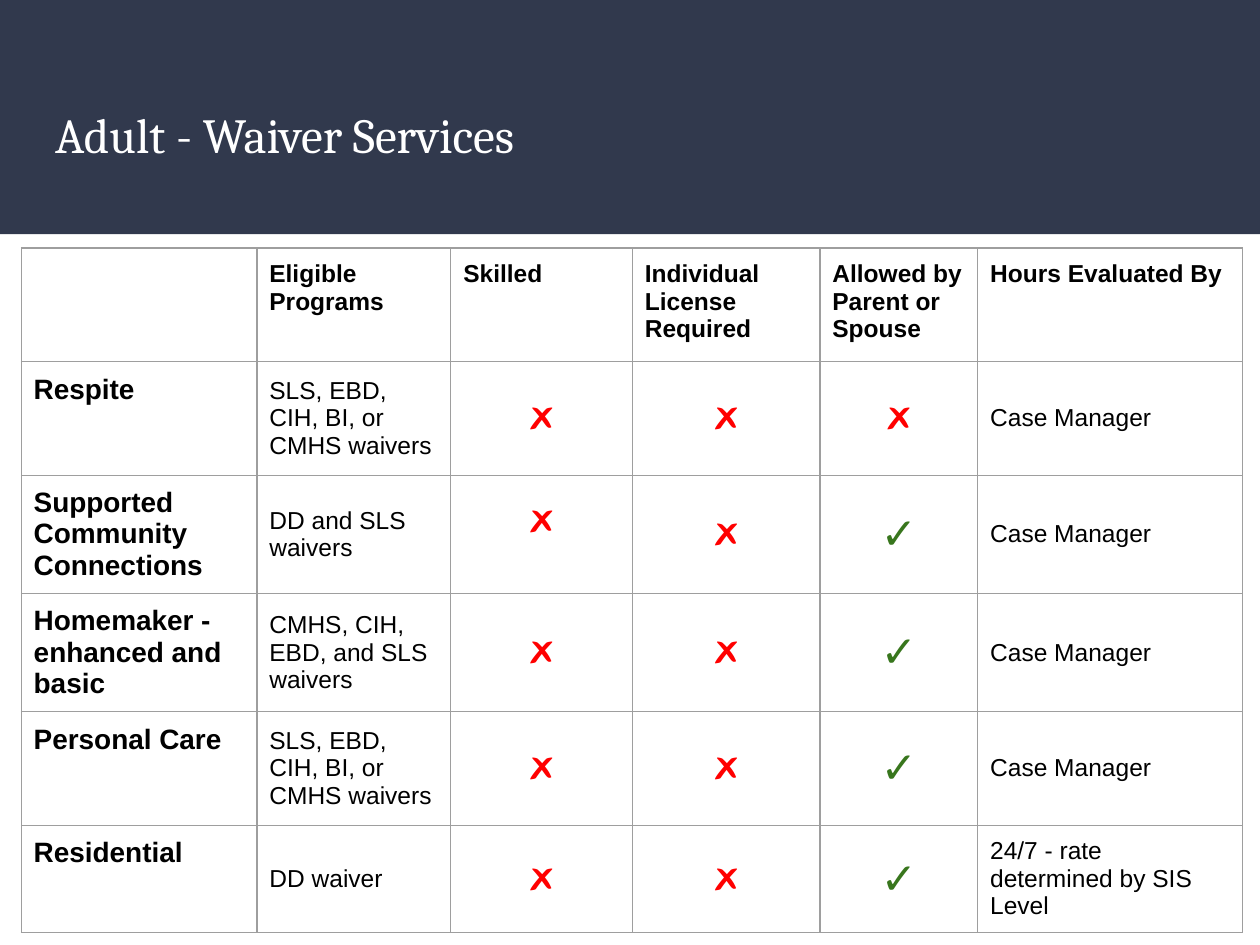
"""Build the adult waiver services slide with its comparison table."""

from dataclasses import dataclass

from lxml.etree import SubElement
from pptx import Presentation
from pptx.dml.color import RGBColor
from pptx.enum.shapes import MSO_SHAPE as Preset
from pptx.enum.text import MSO_ANCHOR as Anchor, PP_ALIGN as Align
from pptx.oxml.ns import qn
from pptx.util import Cm, Pt

COLORS = {
    "band": "31394D",
    "title": "FFFFFF",
    "text": "000000",
    "border": "9E9E9E",
    "no": "FF0000",
    "yes": "38761D",
}
INSET = Cm(0.25)
RAISED_INSET = Cm(0.77)
COLUMN_WIDTHS = (4.75, 3.91, 3.66, 3.78, 3.18, 5.33)
ROW_HEIGHTS = (2.29, 2.29, 2.29, 2.29, 2.29, 2.06)
HEADERS = (
    "",
    "Eligible\nPrograms",
    "Skilled",
    "Individual License Required",
    "Allowed by Parent or Spouse",
    "Hours Evaluated By",
)
NO, YES = "🗶", "✓"


@dataclass(frozen=True)
class CellStyle:
    size: int
    color: str = "text"
    bold: bool = False
    anchor: Anchor = Anchor.MIDDLE
    align: Align = Align.LEFT


@dataclass(frozen=True)
class Service:
    name: str
    programs: str
    parent_allowed: str = YES
    evaluated_by: str = "Case Manager"
    skilled_bottom: int = INSET


HEADER = CellStyle(14, bold=True, anchor=Anchor.TOP)
NAME = CellStyle(16, bold=True, anchor=Anchor.TOP)
BODY = CellStyle(14)
MARKS = {
    NO: CellStyle(25, "no", align=Align.CENTER),
    YES: CellStyle(25, "yes", bold=True, align=Align.CENTER),
}
SERVICES = (
    Service("Respite", "SLS, EBD, CIH, BI, or CMHS waivers", NO),
    Service("Supported Community Connections", "DD and SLS waivers",
            skilled_bottom=RAISED_INSET),
    Service("Homemaker - enhanced and basic", "CMHS, CIH, EBD, and SLS waivers"),
    Service("Personal Care", "SLS, EBD, CIH, BI, or CMHS waivers"),
    Service("Residential", "DD waiver",
            evaluated_by="24/7 - rate determined by SIS Level"),
)


def color(name: str) -> RGBColor:
    return RGBColor.from_string(COLORS[name])


def set_insets(target) -> None:
    target.margin_left = target.margin_right = INSET
    target.margin_top = target.margin_bottom = INSET


def add_borders(cell) -> None:
    properties = cell._tc.get_or_add_tcPr()
    for side in ("a:lnL", "a:lnR", "a:lnT", "a:lnB"):
        line = SubElement(properties, qn(side), w=str(Pt(0.75)))
        fill = SubElement(line, qn("a:solidFill"))
        SubElement(fill, qn("a:srgbClr"), val=COLORS["border"])


def fill_cell(cell, text: str, style: CellStyle) -> None:
    cell.text = text
    set_insets(cell)
    cell.vertical_anchor = style.anchor
    add_borders(cell)
    cell.fill.background()
    for paragraph in cell.text_frame.paragraphs:
        paragraph.alignment = style.align
        font = paragraph.font
        font.name, font.size, font.bold = "Arial", Pt(style.size), style.bold
        font.color.rgb = color(style.color)


def add_title(slide, width: int) -> None:
    band = slide.shapes.add_shape(Preset.RECTANGLE, 0, 0, width, Cm(4.72))
    band.shadow.inherit = False
    band.fill.solid()
    band.fill.fore_color.rgb = color("band")
    band.line.fill.background()
    title = slide.shapes.title
    title.element.addprevious(band.element)
    title.left, title.top = Cm(0.86), Cm(1.85)
    title.width, title.height = Cm(23.67), Cm(2.31)
    frame = title.text_frame
    frame.text = "Adult - Waiver Services"
    frame.vertical_anchor = Anchor.TOP
    set_insets(frame)
    paragraph = frame.paragraphs[0]
    paragraph.alignment = Align.LEFT
    paragraph.font.name, paragraph.font.size = "Cambria", Pt(28)
    paragraph.font.color.rgb = color("title")


def add_services_table(slide) -> None:
    table = slide.shapes.add_table(
        len(ROW_HEIGHTS), len(COLUMN_WIDTHS), Cm(0.43), Cm(5),
        Cm(sum(COLUMN_WIDTHS)), Cm(sum(ROW_HEIGHTS)),
    ).table
    table.first_row = table.horz_banding = False
    for column, width in zip(table.columns, COLUMN_WIDTHS):
        column.width = Cm(width)
    for row, height in zip(table.rows, ROW_HEIGHTS):
        row.height = Cm(height)
    for index, header in enumerate(HEADERS):
        fill_cell(table.cell(0, index), header, HEADER)
    for row_index, service in enumerate(SERVICES, start=1):
        entries = (
            (service.name, NAME),
            (service.programs, BODY),
            (NO, MARKS[NO]),
            (NO, MARKS[NO]),
            (service.parent_allowed, MARKS[service.parent_allowed]),
            (service.evaluated_by, BODY),
        )
        for index, (text, style) in enumerate(entries):
            fill_cell(table.cell(row_index, index), text, style)
        table.cell(row_index, 2).margin_bottom = service.skilled_bottom


def main() -> None:
    presentation = Presentation()
    presentation.slide_width, presentation.slide_height = Cm(25.4), Cm(19.05)
    slide = presentation.slides.add_slide(presentation.slide_layouts[5])
    add_title(slide, presentation.slide_width)
    add_services_table(slide)
    presentation.save("out.pptx")


if __name__ == "__main__":
    main()
